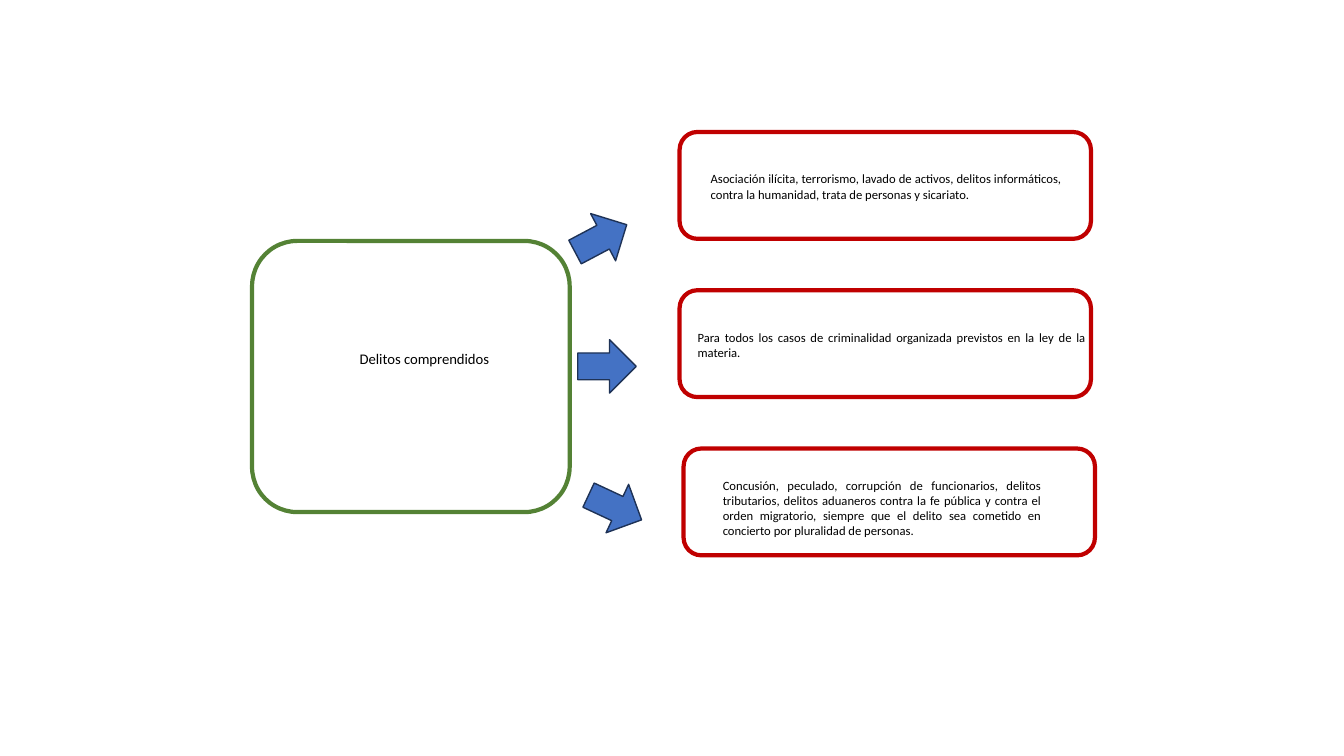
from dataclasses import dataclass

from pptx import Presentation
from pptx.dml.color import RGBColor
from pptx.enum.shapes import MSO_SHAPE
from pptx.enum.text import MSO_ANCHOR, MSO_AUTO_SIZE, PP_ALIGN
from pptx.util import Pt

PX = 9144  # EMU, 100 px to the inch
TITLE_ONLY = 5
ROUNDED = MSO_SHAPE.ROUNDED_RECTANGLE
ARROW = MSO_SHAPE.RIGHT_ARROW
TOP = MSO_ANCHOR.TOP
GROW = MSO_AUTO_SIZE.SHAPE_TO_FIT_TEXT
CENTER, JUSTIFY = PP_ALIGN.CENTER, PP_ALIGN.JUSTIFY


@dataclass(frozen=True)
class Theme:
    font: str = "Calibri"
    text: str = "000000"
    topic: str = "548235"
    crime: str = "C00000"
    arrow_fill: str = "4472C4"
    arrow_line: str = "1E3256"
    title_size: float = 10.5
    body_size: float = 9
    frame_width: float = 3
    arrow_width: float = 1


class SlideBuilder:
    def __init__(self, slide, theme):
        self.slide = slide
        self.theme = theme

    def shape(self, kind, area, line, width, fill=None):
        shape = self.slide.shapes.add_shape(kind, *(n * PX for n in area))
        shape.shadow.inherit = False
        shape.line.color.rgb = RGBColor.from_string(line)
        shape.line.width = Pt(width)
        if fill:
            shape.fill.solid()
            shape.fill.fore_color.rgb = RGBColor.from_string(fill)
        else:
            shape.fill.background()
        return shape

    def frame(self, area, color):
        self.shape(ROUNDED, area, color, self.theme.frame_width)

    def arrow(self, left, top, rotation):
        theme = self.theme
        arrow = self.shape(ARROW, (left, top, 58, 53), theme.arrow_line,
                           theme.arrow_width, theme.arrow_fill)
        arrow.rotation = rotation

    def set_text(self, box, text, size, alignment):
        """Fill a box with one formatted paragraph."""
        frame = box.text_frame
        frame.text = text
        frame.word_wrap = True
        frame.auto_size = GROW
        frame.vertical_anchor = TOP
        para = frame.paragraphs[0]
        para.alignment = alignment
        para.line_spacing = 1.0
        font = para.runs[0].font
        font.name = self.theme.font
        font.size = Pt(size)
        font.color.rgb = RGBColor.from_string(self.theme.text)

    def title(self, area, text):
        title = self.slide.shapes.title
        title.left, title.top, title.width, title.height = (n * PX for n in area)
        self.set_text(title, text, self.theme.title_size, CENTER)

    def body(self, area, text):
        box = self.slide.shapes.add_textbox(*(n * PX for n in area))
        self.set_text(box, text, self.theme.body_size, JUSTIFY)


ARROWS = [(567, 210, 332.1), (581, 477, 25), (573, 337, 0)]

# left edge of the frame, area of its text, text
CRIMES = [
    (674, (695, 165, 367, 56),
     "Asociación ilícita, terrorismo, lavado de activos, delitos informáticos, "
     "contra la humanidad, trata de personas y sicariato."),
    (674, (682, 322, 404, 40),
     "Para todos los casos de criminalidad organizada previstos en la ley de la "
     "materia."),
    (678, (707, 469, 335, 71),
     "Concusión, peculado, corrupción de funcionarios, delitos tributarios, "
     "delitos aduaneros contra la fe pública y contra el orden migratorio, "
     "siempre que el delito sea cometido en concierto por pluralidad de personas."),
]
FIRST_CRIME_TOP, CRIME_STEP = 131, 157


def main():
    deck = Presentation()
    deck.slide_width, deck.slide_height = 1333 * PX, 750 * PX
    theme = Theme()
    page = SlideBuilder(deck.slides.add_slide(deck.slide_layouts[TITLE_ONLY]), theme)

    page.frame((250, 239, 315, 269), theme.topic)
    page.title((291, 342, 260, 28), "Delitos comprendidos")
    for left, top, rotation in ARROWS:
        page.arrow(left, top, rotation)
    for index, (left, text_area, text) in enumerate(CRIMES):
        top = FIRST_CRIME_TOP + index * CRIME_STEP
        page.frame((left, top, 408, 106), theme.crime)
        page.body(text_area, text)

    deck.save("out.pptx")


if __name__ == "__main__":
    main()
